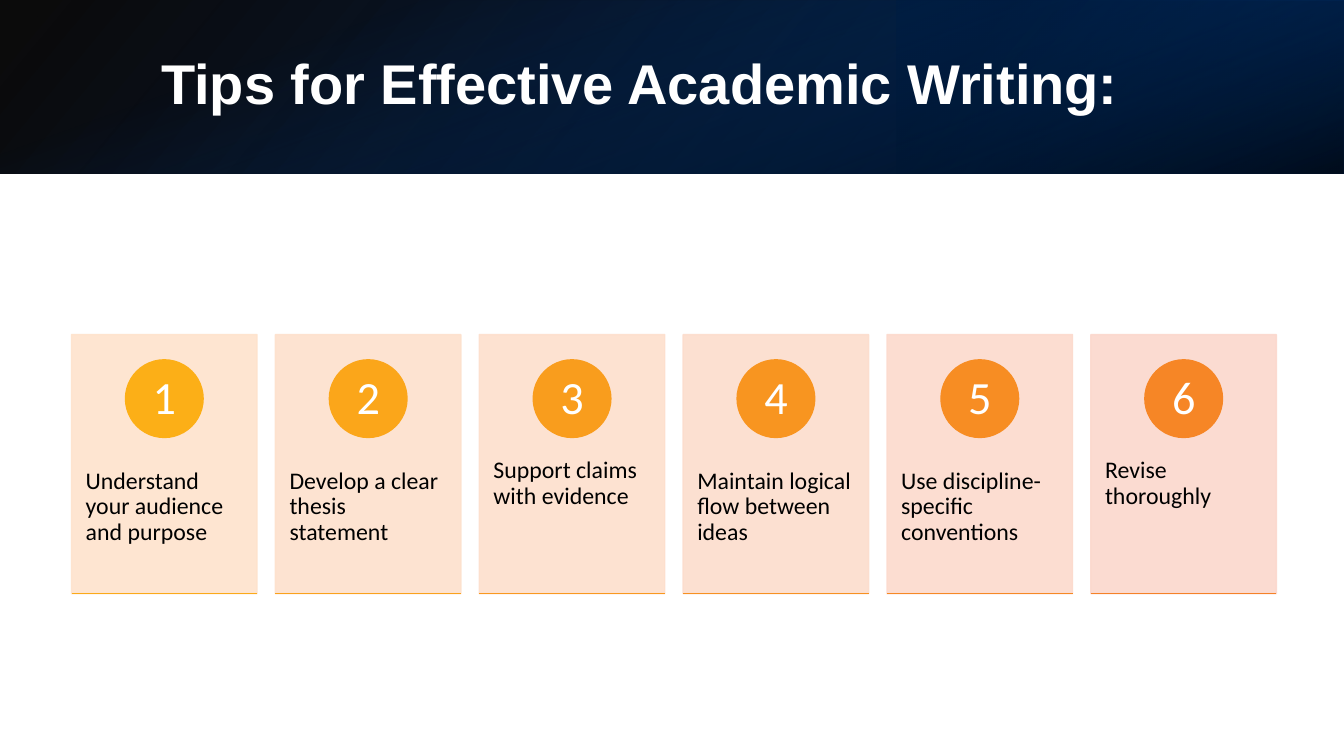
from lxml.etree import SubElement
from pptx import Presentation
from pptx.dml.color import RGBColor
from pptx.enum.shapes import MSO_CONNECTOR, MSO_SHAPE
from pptx.enum.text import MSO_ANCHOR, PP_ALIGN
from pptx.oxml import parse_xml
from pptx.oxml.ns import nsdecls, qn
from pptx.util import Inches, Pt


def paint(fill, code):
    fill.solid()
    fill.fore_color.rgb = RGBColor.from_string(code)


def write(at, text, size, face, code, inset, anchor, align):
    """Add a text box with one run; inset is (sides, top and bottom)."""
    frame = slide.shapes.add_textbox(*map(Inches, at)).text_frame
    frame.word_wrap = True
    frame.vertical_anchor = anchor
    frame.margin_left = frame.margin_right = Inches(inset[0])
    frame.margin_top = frame.margin_bottom = Inches(inset[1])
    para = frame.paragraphs[0]
    para.alignment = align
    para.line_spacing = 0.9
    run = para.add_run()
    run.text = text
    run.font.size = Pt(size)
    run.font.name = face
    paint(run.font.fill, code)
    return run


deck = Presentation()
deck.slide_width = Inches(13.33)
deck.slide_height = Inches(7.5)
slide = deck.slides.add_slide(deck.slide_layouts[6])
paint(slide.background.fill, "FFFFFF")

# Header band: three layered gradients (place, turn, flip, angle, stops)
bands = [
    ((0, 0, 13.33, 1.72), 0, True, 140,
     [(0, "000000", 96), (100, "00295C", 100)]),
    ((8.89, 0, 4.44, 1.72), 180, True, 320,
     [(19, "001C3E", 68), (100, "00377B", 79)]),
    ((5.8, -5.8, 1.72, 13.33), 90, False, 340,
     [(23, "00377B", 0), (99, "000000", 74)]),
]
for at, turn, flip, angle, stops in bands:
    band = slide.shapes.add_shape(MSO_SHAPE.RECTANGLE, *map(Inches, at))
    band.shadow.inherit = False
    band.line.fill.background()
    band.rotation = turn
    props = band.element.spPr
    if flip:
        props.find(qn("a:xfrm")).set("flipH", "1")
    marks = "".join(
        f'<a:gs pos="{pos * 1000}"><a:srgbClr val="{code}">'
        f'<a:alpha val="{alpha * 1000}"/></a:srgbClr></a:gs>'
        for pos, code, alpha in stops)
    props.find(qn("a:prstGeom")).addnext(parse_xml(
        f'<a:gradFill {nsdecls("a")} rotWithShape="1"><a:gsLst>{marks}</a:gsLst>'
        f'<a:lin ang="{angle * 60000}" scaled="0"/></a:gradFill>'))

title = write((1.5, 0.38, 10.98, 0.96), "Tips for Effective Academic Writing:", 40,
              "Arial", "FFFFFF", (0.1, 0.05), MSO_ANCHOR.MIDDLE, PP_ALIGN.LEFT)
title.font.bold = True

# Tip cards: text, card, disc and base line colours
tips = [
    ("Understand your audience and purpose", "FEE3CC", "FCAF17", "FBAA19"),
    ("Develop a clear thesis statement", "FDE1CD", "FBA61A", "FAA21C"),
    ("Support claims with evidence", "FDDFCD", "F99D1D", "F9991F"),
    ("Maintain logical flow between ideas", "FCDDCD", "F89520", "F79122"),
    ("Use discipline-specific conventions", "FCDACD", "F78D23", "F68925"),
    ("Revise thoroughly", "FBD8CD", "F68626", "F58228"),
]
wide = 1.84
step = (10.82 - 0.71) / 5
for num, (tip, pale, bright, base) in enumerate(tips):
    left = 0.71 + num * step
    mid = left + wide / 2

    card = slide.shapes.add_shape(
        MSO_SHAPE.RECTANGLE, *map(Inches, (left, 3.32, wide, 2.57)))
    disc_at = (mid - 0.385, 3.57, 0.77, 0.77)
    write((left, 4.29, wide, 1.54), tip, 17, "Calibri", "000000",
          (0.14, 0.36), MSO_ANCHOR.TOP, PP_ALIGN.LEFT)
    disc = slide.shapes.add_shape(MSO_SHAPE.OVAL, *map(Inches, disc_at))
    for shape, code in ((card, pale), (disc, bright)):
        shape.shadow.inherit = False
        paint(shape.fill, code)
        paint(shape.line.fill, code)
        shape.line.width = Pt(1)
    for color in card.element.spPr.iter(qn("a:srgbClr")):
        SubElement(color, qn("a:alpha")).set("val", "90000")
    write((mid - 0.275, 3.69, 0.55, 0.55), str(num + 1), 33, "Calibri", "FFFFFF",
          (0.06, 0.01), MSO_ANCHOR.MIDDLE, PP_ALIGN.CENTER)

    rule = slide.shapes.add_connector(
        MSO_CONNECTOR.STRAIGHT, *map(Inches, (left, 5.89, left + wide, 5.89)))
    paint(rule.line.fill, base)
    rule.line.width = Pt(1)
    SubElement(rule.element.spPr, qn("a:effectLst"))

deck.save("out.pptx")
